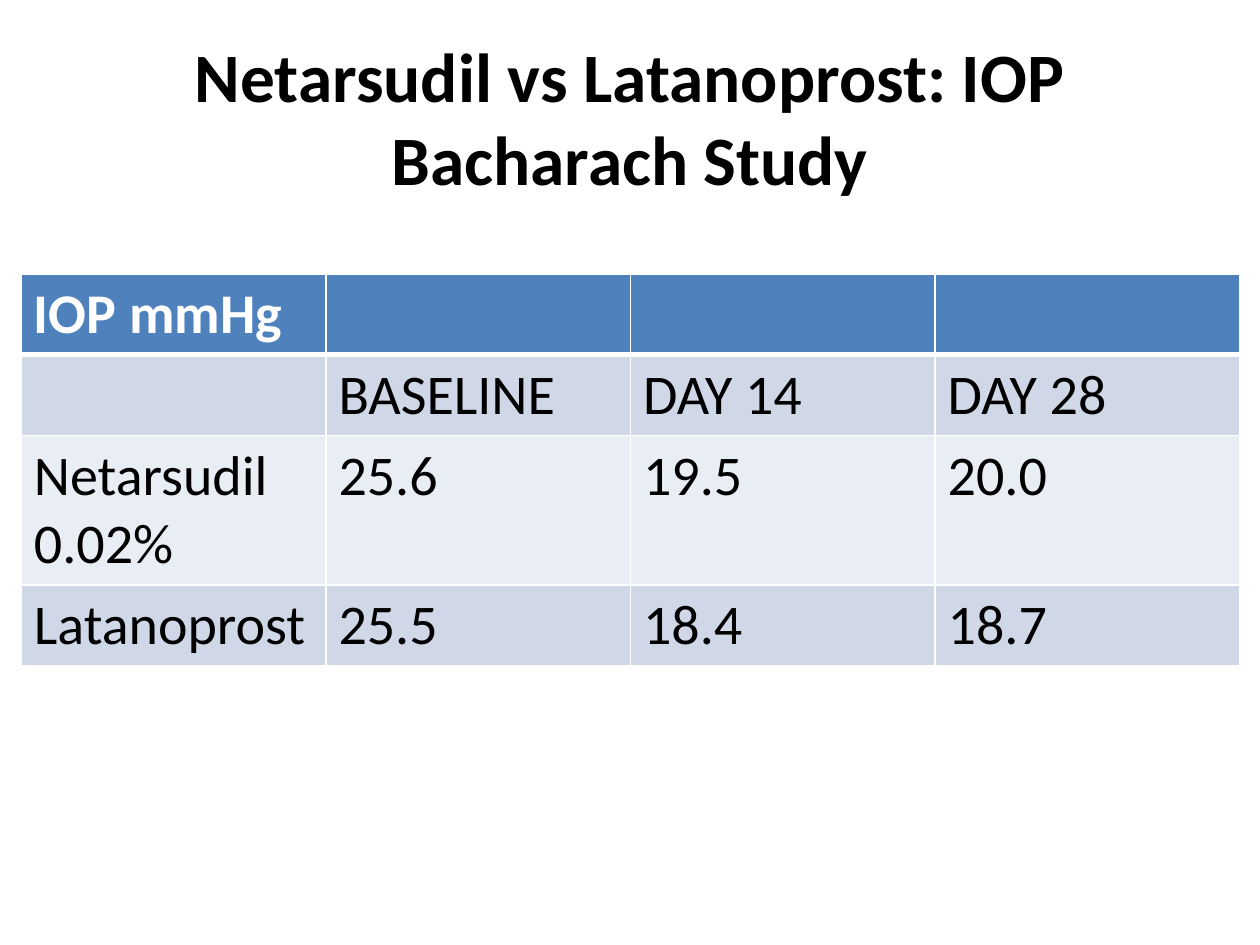
import dataclasses

import lxml.etree
import pptx
import pptx.dml.color
import pptx.enum.text
import pptx.oxml.ns
import pptx.util
from pptx.util import Cm


@dataclasses.dataclass(frozen=True)
class Theme:
    font: str = "Calibri"
    title_size: float = 39.6
    table_size: float = 32
    ink: str = "000000"
    white: str = "FFFFFF"
    header: str = "4F81BD"
    bands: tuple = ("D0D8E8", "E9EDF4")
    line: float = 1
    header_line: float = 3


theme = Theme()


def write(frame, text, *, size, color, bold=False, align=None):
    para = frame.paragraphs[0]
    para.alignment = align
    span = para.add_run()
    span.text = text
    span.font.name = theme.font
    span.font.size = pptx.util.Pt(size)
    span.font.bold = bold
    span.font.color.rgb = pptx.dml.color.RGBColor.from_string(color)


def set_borders(cell, **widths):
    """Draw white cell borders; widths are points keyed by L, R, T and B."""
    properties = cell._tc.get_or_add_tcPr()
    for position, (side, width) in enumerate(widths.items()):
        line = lxml.etree.Element(pptx.oxml.ns.qn(f"a:ln{side}"), w=str(pptx.util.Pt(width)))
        fill = lxml.etree.SubElement(line, pptx.oxml.ns.qn("a:solidFill"))
        lxml.etree.SubElement(fill, pptx.oxml.ns.qn("a:srgbClr"), val=theme.white)
        properties.insert(position, line)


deck = pptx.Presentation()
deck.slide_width, deck.slide_height = Cm(25.4), Cm(19.05)
page = deck.slides.add_slide(deck.slide_layouts[6])

title = page.shapes.add_textbox(Cm(1.27), Cm(0.76), Cm(22.86), Cm(3.18)).text_frame
title.word_wrap = True
title.vertical_anchor = pptx.enum.text.MSO_ANCHOR.MIDDLE
write(title, "Netarsudil vs Latanoprost: IOP Bacharach Study", size=theme.title_size,
      color=theme.ink, bold=True, align=pptx.enum.text.PP_ALIGN.CENTER)

readings = [
    ("IOP mmHg", "", "", ""),
    ("", "BASELINE", "DAY 14", "DAY 28"),
    ("Netarsudil 0.02%", "25.6", "19.5", "20.0"),
    ("Latanoprost", "25.5", "18.4", "18.7"),
]
row_heights = [Cm(1.63), Cm(1.63), Cm(3.01), Cm(1.63)]
column_width = Cm(6.14)

table = page.shapes.add_table(len(readings), len(readings[0]), Cm(0.43), Cm(5.52),
                              column_width * len(readings[0]), sum(row_heights)).table
for column in table.columns:
    column.width = column_width

for row, (texts, height) in enumerate(zip(readings, row_heights)):
    table.rows[row].height = height
    is_header = row == 0
    background = theme.header if is_header else theme.bands[(row - 1) % 2]
    for column, text in enumerate(texts):
        cell = table.cell(row, column)
        cell.fill.solid()
        cell.fill.fore_color.rgb = pptx.dml.color.RGBColor.from_string(background)
        set_borders(cell, L=theme.line, R=theme.line,
                    T=theme.header_line if row == 1 else theme.line,
                    B=theme.header_line if is_header else theme.line)
        if text:
            write(cell.text_frame, text, size=theme.table_size, bold=is_header,
                  color=theme.white if is_header else theme.ink)

deck.save("out.pptx")
